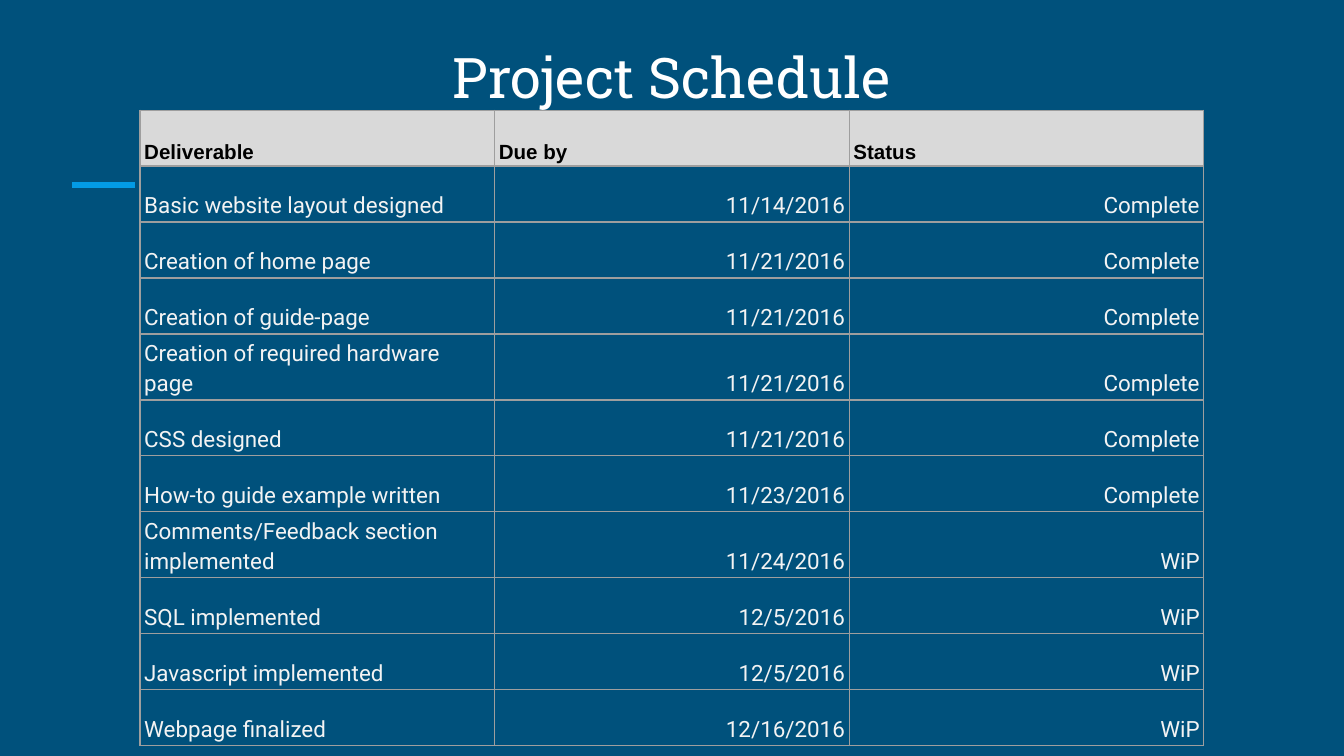
from lxml.etree import SubElement
from pptx import Presentation
from pptx.dml.color import RGBColor
from pptx.enum.shapes import MSO_CONNECTOR
from pptx.enum.text import MSO_ANCHOR, PP_ALIGN
from pptx.oxml.ns import qn
from pptx.util import Pt

COLORS = {
    "background": "00517C",
    "accent": "039BE5",
    "title": "FFFFFF",
    "header_fill": "D9D9D9",
    "header_text": "000000",
    "body_text": "F3F3F3",
    "border": "9E9E9E",
}
ROWS = [
    ("Deliverable", "Due by", "Status"),
    ("Basic website layout designed", "11/14/2016", "Complete"),
    ("Creation of home page", "11/21/2016", "Complete"),
    ("Creation of guide-page", "11/21/2016", "Complete"),
    ("Creation of required hardware page", "11/21/2016", "Complete"),
    ("CSS designed", "11/21/2016", "Complete"),
    ("How-to guide example written", "11/23/2016", "Complete"),
    ("Comments/Feedback section implemented", "11/24/2016", "WiP"),
    ("SQL implemented", "12/5/2016", "WiP"),
    ("Javascript implemented", "12/5/2016", "WiP"),
    ("Webpage finalized", "12/16/2016", "WiP"),
]
COL_WIDTH, ROW_HEIGHT = 190, 30


def style_run(r, font, size, color, bold=False):
    r.font.name = font
    r.font.size = Pt(size)
    r.font.bold = bold
    r.font.color.rgb = RGBColor.from_string(COLORS[color])


def add_borders(cell):
    """Draw all four cell edges; call before setting the cell's fill."""
    tc_pr = cell._tc.get_or_add_tcPr()
    for edge in ("a:lnL", "a:lnR", "a:lnT", "a:lnB"):
        ln = SubElement(tc_pr, qn(edge), w=str(Pt(0.75)))
        fill = SubElement(ln, qn("a:solidFill"))
        SubElement(fill, qn("a:srgbClr"), val=COLORS["border"])


prs = Presentation()
prs.slide_width, prs.slide_height = Pt(720), Pt(405)
s = prs.slides.add_slide(prs.slide_layouts[6])
s.background.fill.solid()
s.background.fill.fore_color.rgb = RGBColor.from_string(COLORS["background"])

# Accent line
accent = s.shapes.add_connector(MSO_CONNECTOR.STRAIGHT, Pt(38.75), Pt(99), Pt(72.25), Pt(99))
accent.line.width = Pt(3)
accent.line.color.rgb = RGBColor.from_string(COLORS["accent"])
SubElement(accent._element.spPr, qn("a:effectLst"))

# Schedule table
table = s.shapes.add_table(len(ROWS), 3, Pt(75), Pt(59), Pt(3 * COL_WIDTH),
                           Pt(len(ROWS) * ROW_HEIGHT)).table
table.horz_banding = False
for col in table.columns:
    col.width = Pt(COL_WIDTH)
for i, texts in enumerate(ROWS):
    table.rows[i].height = Pt(ROW_HEIGHT)
    for j, text in enumerate(texts):
        cell = table.cell(i, j)
        add_borders(cell)
        cell.vertical_anchor = MSO_ANCHOR.BOTTOM
        cell.margin_left = cell.margin_right = Pt(2.25)
        cell.margin_top = cell.margin_bottom = Pt(1.5)
        p = cell.text_frame.paragraphs[0]
        p.text = text
        p.line_spacing = 1.15
        if i == 0:
            cell.fill.solid()
            cell.fill.fore_color.rgb = RGBColor.from_string(COLORS["header_fill"])
            style_run(p.runs[0], "Arial", 11, "header_text", bold=True)
        else:
            cell.fill.background()
            p.alignment = PP_ALIGN.RIGHT if j else PP_ALIGN.LEFT
            style_run(p.runs[0], "Roboto", 12, "body_text")

# Title
title = s.shapes.add_textbox(Pt(103), Pt(15.75), Pt(513.5), Pt(21.75))
tf = title.text_frame
tf.word_wrap = True
tf.margin_left = tf.margin_right = tf.margin_top = tf.margin_bottom = Pt(7.2)
tf.text = "Project Schedule"
p = tf.paragraphs[0]
p.alignment = PP_ALIGN.CENTER
style_run(p.runs[0], "Roboto Slab", 30, "title")

prs.save("out.pptx")
